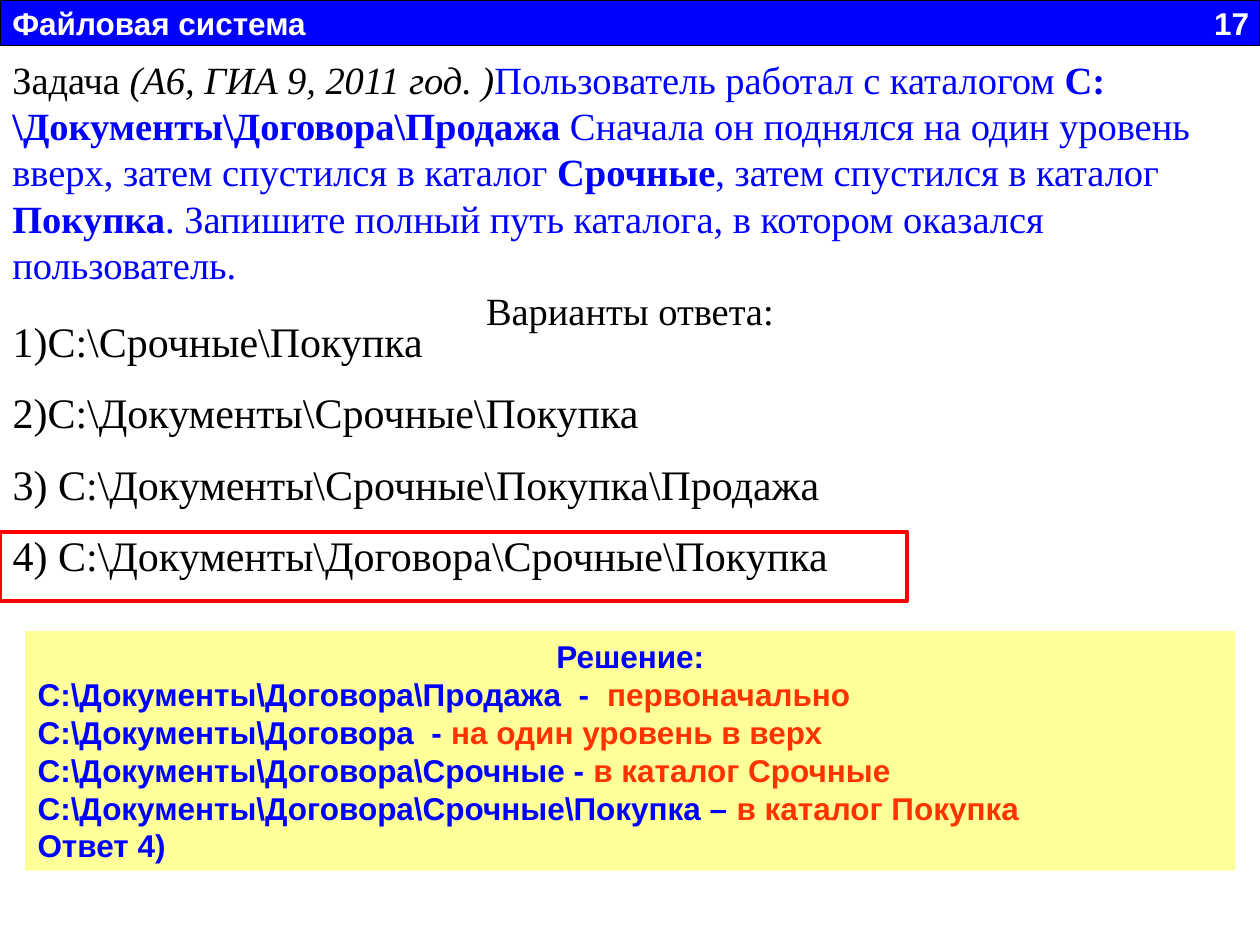
from lxml import etree
from pptx import Presentation
from pptx.dml.color import RGBColor
from pptx.enum.shapes import MSO_SHAPE
from pptx.enum.text import MSO_ANCHOR, PP_ALIGN
from pptx.oxml.ns import qn
from pptx.util import Pt

RECTANGLE = MSO_SHAPE.RECTANGLE
MIDDLE, TOP = MSO_ANCHOR.MIDDLE, MSO_ANCHOR.TOP
LEFT, CENTER = PP_ALIGN.LEFT, PP_ALIGN.CENTER
BLACK, WHITE, BLUE, RED = "000000", "FFFFFF", "0000FF", "FF0000"
ORANGE, YELLOW = "FF3300", "FFFF99"
SANS, SERIF = "Arial", "Times New Roman"


def rgb(value):
    return RGBColor.from_string(value)


def add_span(para, text, font, size, color, bold=False, italic=False):
    span = para.add_run()
    span.text = text
    span.font.name = font
    span.font.size = Pt(size)
    span.font.color.rgb = rgb(color)
    span.font.bold = bold
    span.font.italic = italic


deck = Presentation()
deck.slide_width, deck.slide_height = Pt(720), Pt(540)
page = deck.slides.add_slide(deck.slide_layouts[6])

# Header bar: title on the left, page number at a right tab stop
header = page.shapes.add_shape(RECTANGLE, Pt(0), Pt(0), Pt(720), Pt(26))
header.shadow.inherit = False
header.fill.solid()
header.fill.fore_color.rgb = rgb(BLUE)
header.line.color.rgb = rgb(BLACK)
header.line.width = Pt(0.75)
header.text_frame.word_wrap = True
header.text_frame.margin_right = Pt(5)
header.text_frame.vertical_anchor = MIDDLE
para = header.text_frame.paragraphs[0]
para.alignment = LEFT
add_span(para, "Файловая система\t17", SANS, 18, WHITE, bold=True)
tab_list = etree.SubElement(para._p.get_or_add_pPr(), qn("a:tabLst"))
etree.SubElement(tab_list, qn("a:tab"), pos=str(int(Pt(706.8))), algn="r")

# Question
question = page.shapes.add_textbox(Pt(0), Pt(28.4), Pt(720), Pt(165.6))
question.text_frame.word_wrap = True
question.text_frame.vertical_anchor = MIDDLE
para = question.text_frame.paragraphs[0]
add_span(para, "Задача ", SERIF, 22, BLACK)
add_span(para, "(А6, ГИА 9, 2011 год. )", SERIF, 22, BLACK, italic=True)
question_parts = [
    ("Пользователь работал с каталогом ", False),
    ("С:\\Документы\\Договора\\Продажа", True),
    (" Сначала он поднялся на один уровень вверх, затем спустился в каталог ", False),
    ("Срочные", True),
    (", затем спустился в каталог ", False),
    ("Покупка", True),
    (". Запишите полный путь каталога, в котором оказался пользователь.", False),
]
for text, bold in question_parts:
    add_span(para, text, SERIF, 22, BLUE, bold=bold)
para = question.text_frame.add_paragraph()
para.alignment = CENTER
add_span(para, "Варианты ответа:", SERIF, 22, BLACK)

# Answer options in a table without fill or borders
options = [
    "1)С:\\Срочные\\Покупка",
    "2)С:\\Документы\\Срочные\\Покупка",
    "3) С:\\Документы\\Срочные\\Покупка\\Продажа",
    "4) С:\\Документы\\Договора\\Срочные\\Покупка",
]
table = page.shapes.add_table(len(options), 2, Pt(0), Pt(179.3), Pt(555.8), Pt(163.4)).table
table.first_row = False
table.horz_banding = False
table.columns[0].width, table.columns[1].width = Pt(539.3), Pt(16.5)
for row, option in zip(table.rows, options):
    row.height = Pt(40.85)
    for cell in row.cells:
        cell_properties = cell._tc.get_or_add_tcPr()
        for side in ("a:lnL", "a:lnR", "a:lnT", "a:lnB"):
            border = etree.SubElement(cell_properties, qn(side), w="0")
            etree.SubElement(border, qn("a:noFill"))
        cell.fill.background()
    add_span(row.cells[0].text_frame.paragraphs[0], option, SERIF, 24, BLACK)

# Solution
solution = page.shapes.add_shape(RECTANGLE, Pt(14.4), Pt(360.7), Pt(691.6), Pt(136.8))
solution.shadow.inherit = False
solution.fill.solid()
solution.fill.fore_color.rgb = rgb(YELLOW)
solution.line.fill.background()
solution.text_frame.word_wrap = True
solution.text_frame.vertical_anchor = TOP
steps = [
    ("Решение:", ""),
    ("С:\\Документы\\Договора\\Продажа  -  ", "первоначально"),
    ("С:\\Документы\\Договора  - ", "на один уровень в верх"),
    ("С:\\Документы\\Договора\\Срочные - ", "в каталог Срочные"),
    ("С:\\Документы\\Договора\\Срочные\\Покупка – ", "в каталог Покупка"),
    ("Ответ 4)", ""),
]
for index, (folder, remark) in enumerate(steps):
    frame = solution.text_frame
    para = frame.add_paragraph() if index else frame.paragraphs[0]
    para.alignment = LEFT if index else CENTER
    add_span(para, folder, SANS, 18, BLUE, bold=True)
    if remark:
        add_span(para, remark, SANS, 18, ORANGE, bold=True)

# Frame around the right answer
marker = page.shapes.add_shape(RECTANGLE, Pt(0), Pt(303.8), Pt(518.4), Pt(39.6))
marker.shadow.inherit = False
marker.fill.background()
marker.line.color.rgb = rgb(RED)
marker.line.width = Pt(2.25)

deck.save("out.pptx")
